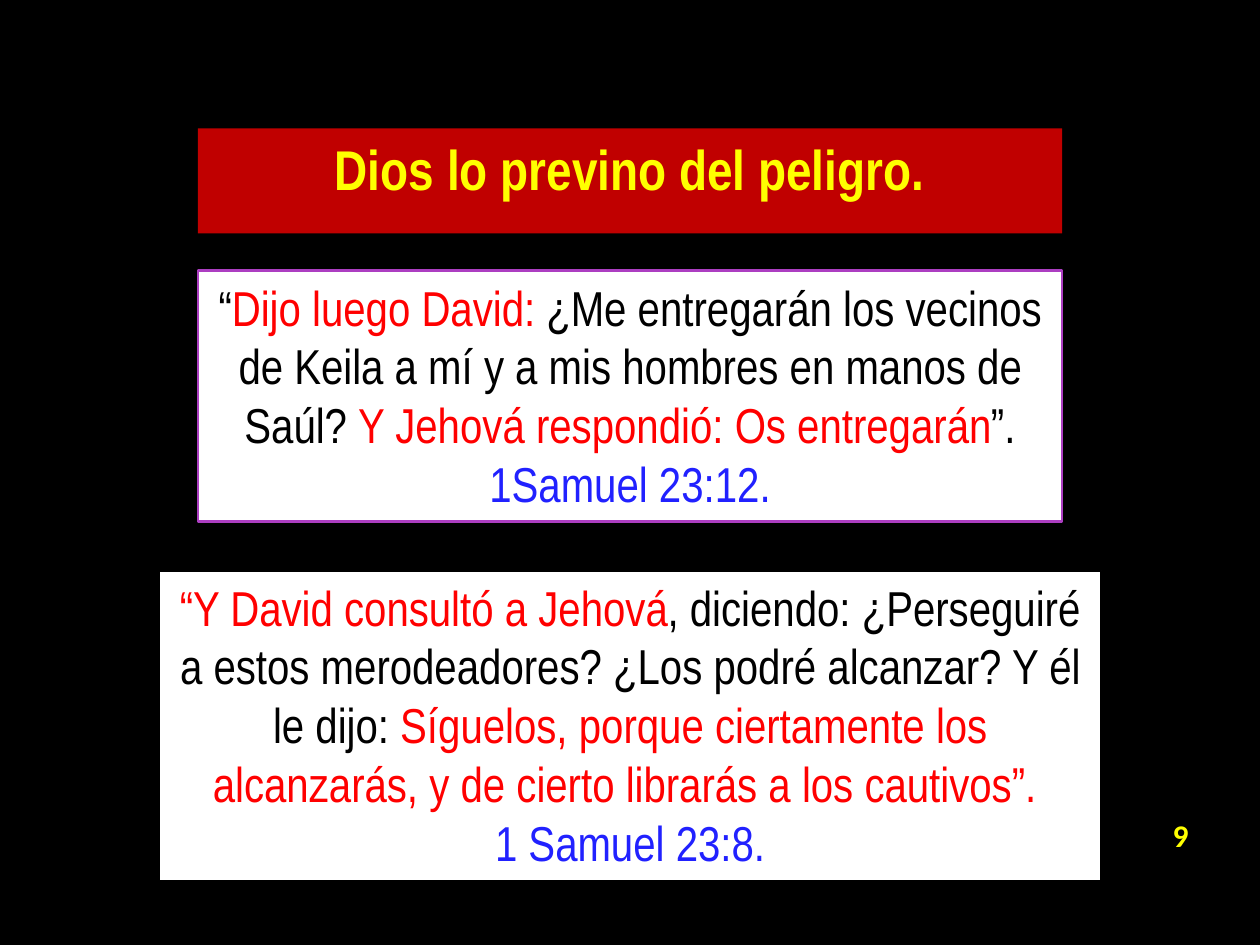
from dataclasses import dataclass

from lxml import etree
from pptx import Presentation
from pptx.dml.color import RGBColor
from pptx.enum.shapes import MSO_SHAPE
from pptx.enum.text import MSO_ANCHOR, MSO_AUTO_SIZE, PP_ALIGN
from pptx.oxml.ns import qn
from pptx.util import Cm, Pt

RECTANGLE = MSO_SHAPE.RECTANGLE
TOP, MIDDLE = MSO_ANCHOR.TOP, MSO_ANCHOR.MIDDLE
FIT_SHAPE = MSO_AUTO_SIZE.SHAPE_TO_FIT_TEXT
CENTER, RIGHT = PP_ALIGN.CENTER, PP_ALIGN.RIGHT
TITLE_ONLY = 5
SLIDE_WIDTH, SLIDE_HEIGHT = 25.4, 19.05


@dataclass(frozen=True)
class Theme:
    black: str = "000000"
    white: str = "FFFFFF"
    yellow: str = "FFFF00"
    crimson: str = "C00000"
    red: str = "FF0000"
    blue: str = "2121FF"
    purple: str = "AC3EC1"
    text_font: str = "Arial Narrow"
    number_font: str = "Calibri"
    title_size: int = 32
    verse_size: int = 28
    number_size: int = 18
    thin: float = 0.75
    thick: float = 1.5


THEME = Theme()


@dataclass(frozen=True)
class Phrase:
    text: str
    color: str
    outline: str = ""


@dataclass(frozen=True)
class Verse:
    top: float
    width: float
    height: float
    border: str
    paragraphs: tuple[tuple[Phrase, ...], ...]


VERSES = (
    Verse(5.46, 17.42, 5.05, THEME.purple, ((
        Phrase("“", THEME.black, THEME.blue),
        Phrase("Dijo luego David: ", THEME.red, THEME.red),
        Phrase("¿Me entregarán los vecinos de Keila a mí y a mis hombres "
               "en manos de Saúl? ", THEME.black, THEME.blue),
        Phrase("Y Jehová respondió: Os entregarán", THEME.red, THEME.crimson),
        Phrase("”.", THEME.black, THEME.blue),
        Phrase(" 1Samuel 23:12.", THEME.blue, THEME.blue),
    ),)),
    Verse(11.51, 19, 6.25, THEME.black, (
        (
            Phrase("“Y David consultó a Jehová", THEME.red, THEME.red),
            Phrase(", ", THEME.black, THEME.red),
            Phrase("diciendo: ¿Perseguiré a estos merodeadores? ¿Los podré "
                   "alcanzar? Y él le dijo: ", THEME.black, THEME.black),
            Phrase("Síguelos, porque ciertamente los alcanzarás, y de cierto "
                   "librarás a los cautivos”. ", THEME.red, THEME.crimson),
        ),
        (Phrase("1 Samuel 23:8.", THEME.blue, THEME.blue),),
    )),
)


def rgb(color: str) -> RGBColor:
    return RGBColor.from_string(color)


def add_text(paragraph, text: str, *, size: int, color: str, outline: str,
             outline_width: float, font: str = THEME.text_font,
             bold: bool = False, align=CENTER) -> None:
    paragraph.alignment = align
    run = paragraph.add_run()
    run.text = text
    run.font.name, run.font.size, run.font.bold = font, Pt(size), bold
    run.font.color.rgb = rgb(color)
    # The letter outline must come first among the run properties
    line = etree.Element(qn("a:ln"), w=str(Pt(outline_width)))
    fill = etree.SubElement(line, qn("a:solidFill"))
    etree.SubElement(fill, qn("a:srgbClr"), val=outline)
    run.font._element.insert(0, line)


def place(shape, top: float, width: float, height: float) -> None:
    """Centre a shape across the slide."""
    shape.left, shape.top = Cm((SLIDE_WIDTH - width) / 2), Cm(top)
    shape.width, shape.height = Cm(width), Cm(height)


def prepare_frame(frame, anchor=TOP) -> None:
    frame.word_wrap = True
    frame.auto_size = FIT_SHAPE
    frame.vertical_anchor = anchor


def add_soft_shadow(shape) -> None:
    effects = etree.SubElement(shape._element.spPr, qn("a:effectLst"))
    shadow = etree.SubElement(effects, qn("a:outerShdw"), blurRad=str(Pt(5)),
                              dist=str(Pt(3)), dir="5400000", rotWithShape="0")
    color = etree.SubElement(shadow, qn("a:srgbClr"), val=THEME.black)
    etree.SubElement(color, qn("a:alpha"), val="65000")


def add_title(slide, text: str) -> None:
    title = slide.shapes.title
    place(title, 2.59, 17.42, 1.63)
    title.fill.solid()
    title.fill.fore_color.rgb = rgb(THEME.crimson)
    add_soft_shadow(title)
    prepare_frame(title.text_frame)
    add_text(title.text_frame.paragraphs[0], text, size=THEME.title_size,
             color=THEME.yellow, outline=THEME.yellow,
             outline_width=THEME.thin, bold=True)


def add_verse(slide, verse: Verse) -> None:
    box = slide.shapes.add_shape(RECTANGLE, 0, 0, 0, 0)
    place(box, verse.top, verse.width, verse.height)
    box.shadow.inherit = False
    box.fill.solid()
    box.fill.fore_color.rgb = rgb(THEME.white)
    box.line.color.rgb = rgb(verse.border)
    box.line.width = Pt(1.5)
    frame = box.text_frame
    prepare_frame(frame)
    for index, phrases in enumerate(verse.paragraphs):
        paragraph = frame.add_paragraph() if index else frame.paragraphs[0]
        for phrase in phrases:
            add_text(paragraph, phrase.text, size=THEME.verse_size,
                     color=phrase.color, outline=phrase.outline,
                     outline_width=THEME.thick)


def add_page_number(slide, number: str) -> None:
    box = slide.shapes.add_textbox(Cm(23.04), Cm(16.31), Cm(1.17), Cm(1.04))
    frame = box.text_frame
    frame.word_wrap = True
    frame.vertical_anchor = MIDDLE
    add_text(frame.paragraphs[0], number, size=THEME.number_size,
             color=THEME.yellow, outline=THEME.yellow,
             outline_width=THEME.thin, font=THEME.number_font,
             bold=True, align=RIGHT)


def main() -> None:
    presentation = Presentation()
    presentation.slide_width = Cm(SLIDE_WIDTH)
    presentation.slide_height = Cm(SLIDE_HEIGHT)
    slide = presentation.slides.add_slide(
        presentation.slide_layouts[TITLE_ONLY])
    slide.background.fill.solid()
    slide.background.fill.fore_color.rgb = rgb(THEME.black)

    # Heading, the two quotations and the page number
    add_title(slide, "Dios lo previno del peligro.")
    for verse in VERSES:
        add_verse(slide, verse)
    add_page_number(slide, "9")
    presentation.save("out.pptx")


if __name__ == "__main__":
    main()
